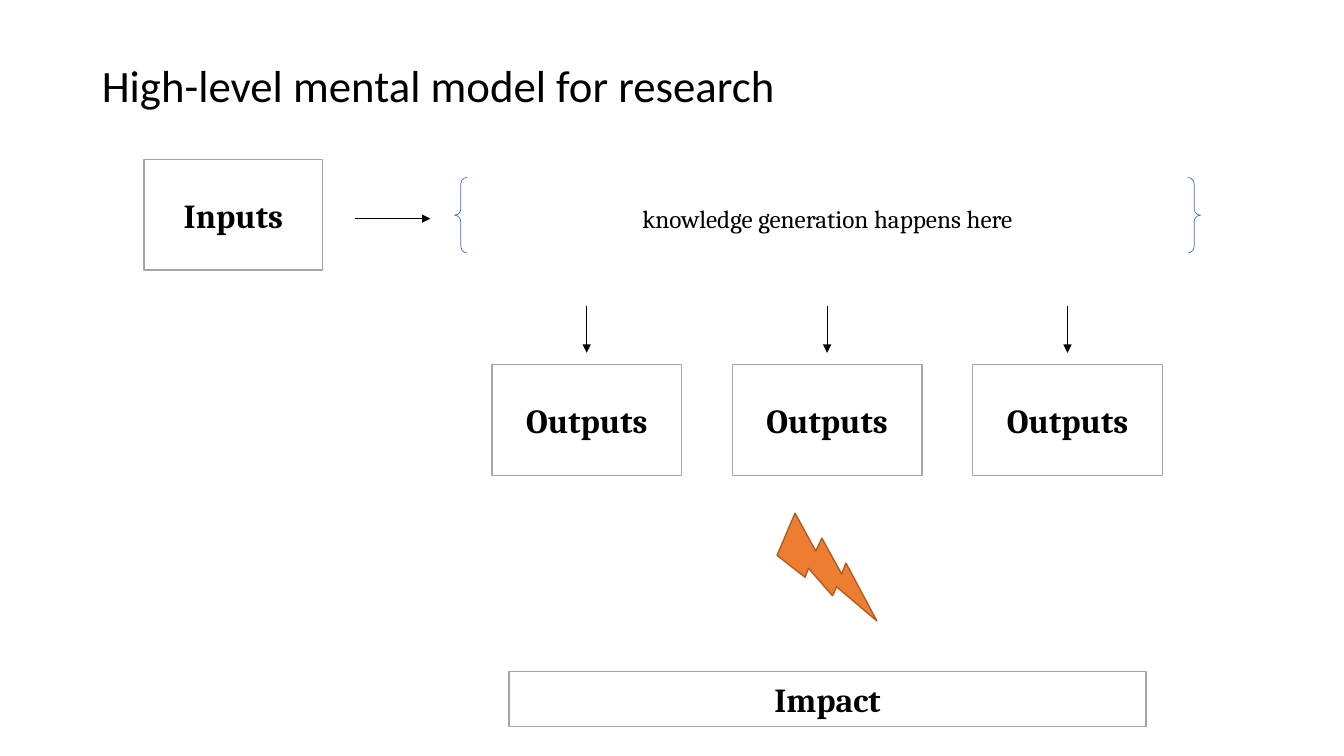
from lxml.etree import SubElement
from pptx import Presentation
from pptx.dml.color import RGBColor
from pptx.enum.shapes import MSO_CONNECTOR, MSO_SHAPE
from pptx.enum.text import MSO_ANCHOR, MSO_AUTO_SIZE, PP_ALIGN
from pptx.oxml.ns import qn
from pptx.util import Pt

BLACK = RGBColor(0x00, 0x00, 0x00)
WHITE = RGBColor(0xFF, 0xFF, 0xFF)
GRAY = RGBColor(0xA5, 0xA5, 0xA5)
BLUE = RGBColor(0x44, 0x72, 0xC4)
ORANGE = RGBColor(0xED, 0x7D, 0x31)
DARK_ORANGE = RGBColor(0xAF, 0x5C, 0x24)

BOX_HEIGHT = 79.2
OUTPUT_COUNT = 3
OUTPUT_LEFT, OUTPUT_TOP = 351.4, 260.6
OUTPUT_WIDTH, OUTPUT_STEP = 135.4, 171.7


class Diagram:
    """Draws elements in one style on the current slide."""

    title_font = "Calibri"
    body_font = "Cambria"

    def __init__(self, slide):
        self.slide = slide

    def set_text(self, frame, text, font_name, size, bold=False, align=PP_ALIGN.CENTER):
        frame.word_wrap = True
        frame.vertical_anchor = MSO_ANCHOR.MIDDLE
        frame.text = text
        para = frame.paragraphs[0]
        para.alignment = align
        para.font.name = font_name
        para.font.size = Pt(size)
        para.font.bold = bold
        para.font.color.rgb = BLACK

    def title(self, text, left, top, width, height):
        title = self.slide.shapes.title
        title.left, title.top = Pt(left), Pt(top)
        title.width, title.height = Pt(width), Pt(height)
        self.set_text(title.text_frame, text, self.title_font, 32, align=PP_ALIGN.LEFT)
        title.text_frame.auto_size = MSO_AUTO_SIZE.NONE

    def shape(self, kind, left, top, width, height, fill, line, line_width=1):
        shape = self.slide.shapes.add_shape(
            kind, Pt(left), Pt(top), Pt(width), Pt(height))
        shape.shadow.inherit = False
        if fill is None:
            shape.fill.background()
        else:
            shape.fill.solid()
            shape.fill.fore_color.rgb = fill
        shape.line.color.rgb = line
        shape.line.width = Pt(line_width)
        return shape

    def box(self, text, left, top, width, height):
        box = self.shape(MSO_SHAPE.RECTANGLE, left, top, width, height, WHITE, GRAY)
        self.set_text(box.text_frame, text, self.body_font, 24, bold=True)

    def braces(self, text, left, top, width, height):
        braces = self.shape(
            MSO_SHAPE.DOUBLE_BRACE, left, top, width, height, None, BLUE, 0.5)
        self.set_text(braces.text_frame, text, self.body_font, 18)

    def bolt(self, left, top, width, height):
        bolt = self.shape(
            MSO_SHAPE.LIGHTNING_BOLT, left, top, width, height, ORANGE, DARK_ORANGE)
        bolt.rotation = 90
        bolt._element.spPr.find(qn("a:xfrm")).set("flipV", "1")

    def arrow(self, start_x, start_y, end_x, end_y):
        arrow = self.slide.shapes.add_connector(
            MSO_CONNECTOR.STRAIGHT, Pt(start_x), Pt(start_y), Pt(end_x), Pt(end_y))
        arrow.line.color.rgb = BLACK
        arrow.line.width = Pt(0.5)
        properties = arrow._element.spPr
        SubElement(properties.find(qn("a:ln")), qn("a:tailEnd"), type="triangle")
        SubElement(properties, qn("a:effectLst"))


def main():
    deck = Presentation()
    deck.slide_width, deck.slide_height = Pt(960), Pt(540)
    diagram = Diagram(deck.slides.add_slide(deck.slide_layouts[5]))
    diagram.title("High-level mental model for research", 65.5, 37.4, 804.2, 46)

    # Inputs lead into knowledge generation
    diagram.box("Inputs", 103, 113.8, 127.4, BOX_HEIGHT)
    diagram.arrow(253.4, 156.2, 307.4, 156.2)
    diagram.braces("knowledge generation happens here", 324.7, 126.7, 532.8, 54)

    # Outputs, each under its arrow
    for index in range(OUTPUT_COUNT):
        left = OUTPUT_LEFT + index * OUTPUT_STEP
        center = left + OUTPUT_WIDTH / 2
        diagram.arrow(center, 218.9, center, 252)
        diagram.box("Outputs", left, OUTPUT_TOP, OUTPUT_WIDTH, BOX_HEIGHT)

    # Impact
    diagram.bolt(552.2, 369.4, 77, 71.3)
    diagram.box("Impact", 363.6, 479.5, 455, 39.6)

    deck.save("out.pptx")


if __name__ == "__main__":
    main()
